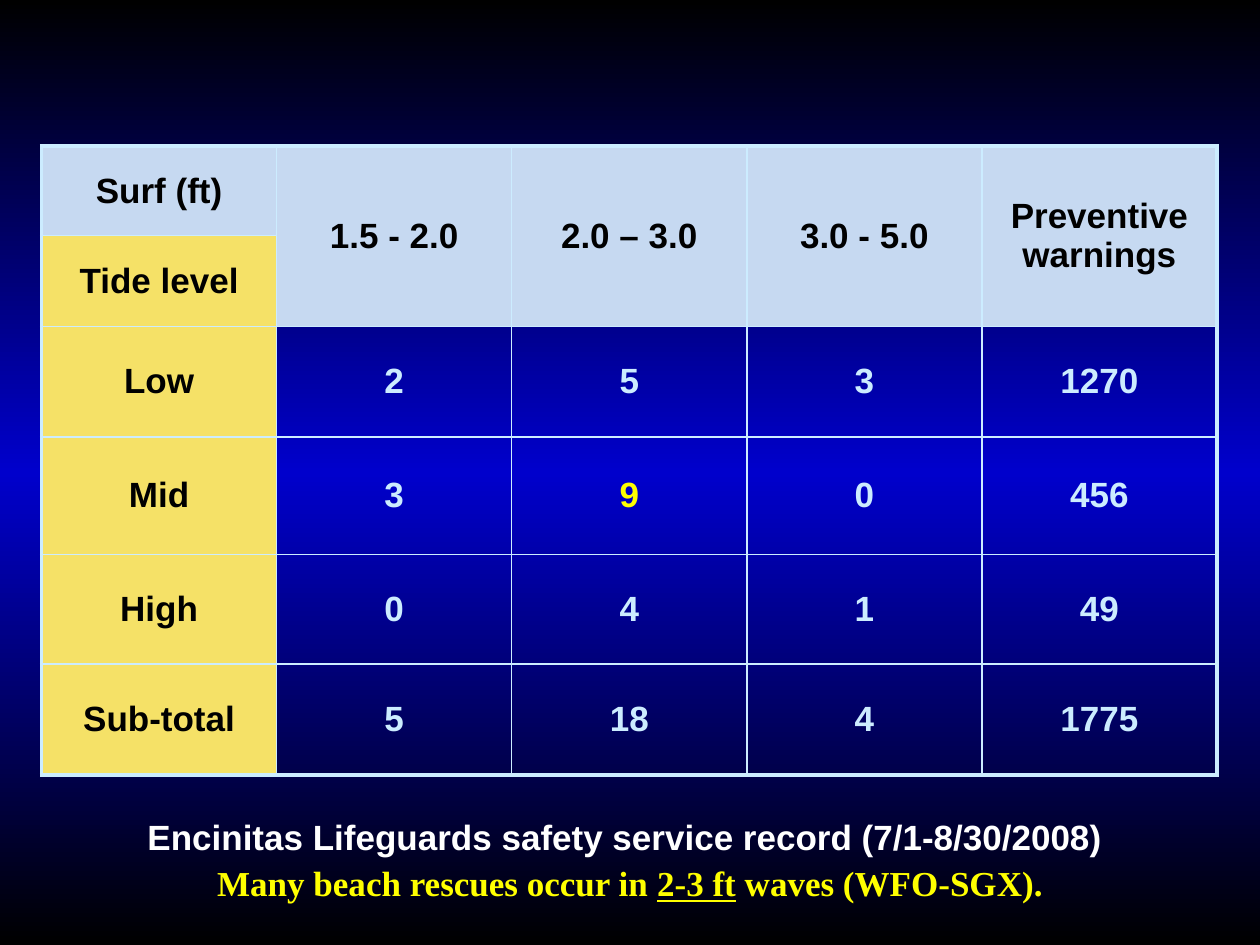
import copy

import pptx
import pptx.util
from lxml import etree
from pptx.dml.color import RGBColor
from pptx.enum.text import MSO_ANCHOR, PP_ALIGN
from pptx.oxml.ns import qn
from pptx.util import Inches

BLACK = RGBColor(0x00, 0x00, 0x00)
WHITE = RGBColor(0xFF, 0xFF, 0xFF)
BLUE = RGBColor(0x00, 0x00, 0xCC)
ICE = RGBColor(0xCC, 0xEC, 0xFF)
PALE_BLUE = RGBColor(0xC6, 0xD9, 0xF1)
SAND = RGBColor(0xF5, 0xE1, 0x67)
YELLOW = RGBColor(0xFF, 0xFF, 0x00)

RECORDS = [
    ["Surf (ft)", "1.5 - 2.0", "2.0 – 3.0", "3.0 - 5.0", "Preventive warnings"],
    ["Tide level", "", "", "", ""],
    ["Low", "2", "5", "3", "1270"],
    ["Mid", "3", "9", "0", "456"],
    ["High", "0", "4", "1", "49"],
    ["Sub-total", "5", "18", "4", "1775"],
]
ROW_HEIGHTS = [0.71, 0.71, 0.88, 0.93, 0.87, 0.88]
HEADER_ROWS = 2
PEAK = (3, 2)
INNER, OUTER = 1, 2.25


def style_paragraph(paragraph, color, typeface="Arial"):
    paragraph.alignment = PP_ALIGN.CENTER
    font = paragraph.font
    font.name, font.size, font.bold = typeface, pptx.util.Pt(20), True
    font.color.rgb = color


def set_borders(cell, widths):
    """Draw the cell's edges; widths maps L, R, T and B, in that order, to points."""
    properties = cell._tc.get_or_add_tcPr()
    for side, width in widths.items():
        line = etree.SubElement(properties, qn(f"a:ln{side}"),
                                w=str(int(pptx.util.Pt(width))))
        fill = etree.SubElement(line, qn("a:solidFill"))
        etree.SubElement(fill, qn("a:srgbClr"), val=str(ICE))


def paint_background(slide):
    fill = slide.background.fill
    fill.gradient()
    fill.gradient_angle = 90
    stop_list = slide._element.xpath(".//a:gsLst")[0]
    stop_list.insert(1, copy.deepcopy(stop_list[0]))
    for stop, color, position in zip(fill.gradient_stops, (BLACK, BLUE, BLACK), (0, 0.5, 1)):
        stop.color.rgb = color
        stop.position = position


def add_rescue_table(slide, left, top, width, height):
    last_row, last_col = len(RECORDS) - 1, len(RECORDS[0]) - 1
    table = slide.shapes.add_table(last_row + 1, last_col + 1, left, top, width, height).table
    table.first_row = table.horz_banding = False
    for column in table.columns:
        column.width = width // (last_col + 1)
    for row, row_height in zip(table.rows, ROW_HEIGHTS):
        row.height = Inches(row_height)

    for r, record in enumerate(RECORDS):
        for c, value in enumerate(record):
            cell = table.cell(r, c)
            set_borders(cell, {
                "L": OUTER if c == 0 else INNER,
                "R": OUTER if c == last_col else INNER,
                "T": OUTER if r == 0 else INNER,
                "B": OUTER if r == last_row else INNER,
            })
            is_surf = r == 0 or (r < HEADER_ROWS and c > 0)
            if is_surf or c == 0:
                cell.fill.solid()
                cell.fill.fore_color.rgb = PALE_BLUE if is_surf else SAND
                color = BLACK
            else:
                cell.fill.background()
                color = YELLOW if (r, c) == PEAK else ICE
            cell.vertical_anchor = MSO_ANCHOR.MIDDLE
            cell.text = value
            style_paragraph(cell.text_frame.paragraphs[0], color)

    for c in range(1, last_col + 1):
        table.cell(0, c).merge(table.cell(HEADER_ROWS - 1, c))


def add_caption(slide, left, top, width, height, parts, color, typeface):
    """Add one centred line; parts are pairs of wording and underline."""
    frame = slide.shapes.add_textbox(left, top, width, height).text_frame
    frame.word_wrap = True
    caption = frame.paragraphs[0]
    style_paragraph(caption, color, typeface)
    for wording, underlined in parts:
        run = caption.add_run()
        run.text = wording
        if underlined:
            run.font.underline = True


def main():
    presentation = pptx.Presentation()
    presentation.slide_width, presentation.slide_height = Inches(10), Inches(7.5)
    slide = presentation.slides.add_slide(presentation.slide_layouts[6])
    paint_background(slide)
    add_rescue_table(slide, Inches(0.33), Inches(1.16), Inches(9.33), Inches(sum(ROW_HEIGHTS)))
    add_caption(slide, Inches(0.75), Inches(6.42), Inches(8.42), Inches(1.04),
                [("Encinitas Lifeguards safety service record (7/1-8/30/2008)", False)],
                WHITE, "Arial")
    add_caption(slide, Inches(0.5), Inches(6.79), Inches(9), Inches(0.44),
                [("Many beach rescues occur in ", False), ("2-3 ft", True),
                 (" waves (WFO-SGX).", False)],
                YELLOW, "Times New Roman")
    presentation.save("out.pptx")


if __name__ == "__main__":
    main()
